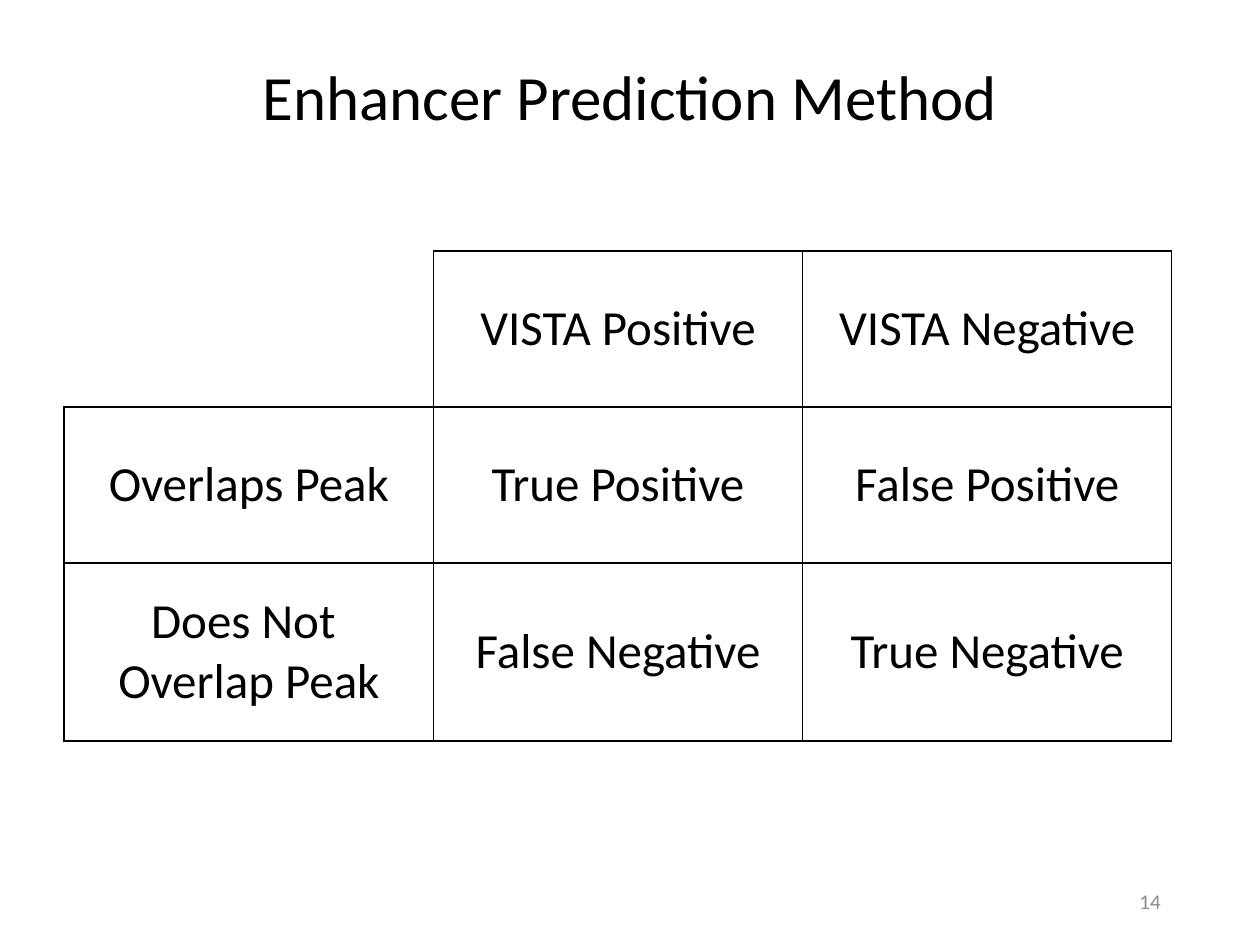
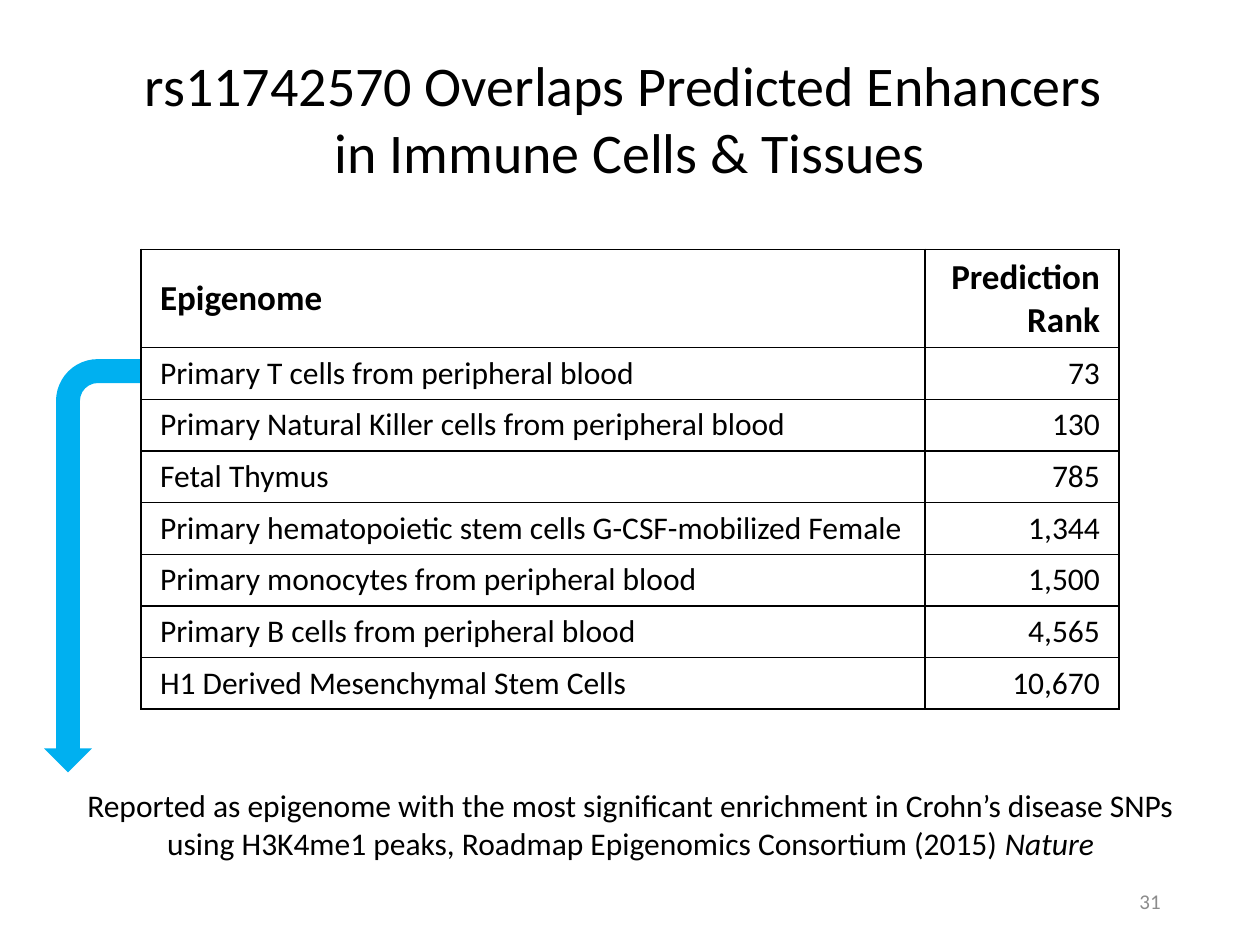
"""Build two slides on enhancer predictions, each with a ruled table."""
from dataclasses import dataclass

import lxml.etree
import pptx
import pptx.dml.color
import pptx.enum.shapes
import pptx.enum.text
import pptx.oxml.ns
import pptx.util

Inches = pptx.util.Inches
Pt = pptx.util.Pt
RGBColor = pptx.dml.color.RGBColor
Align = pptx.enum.text.PP_ALIGN
Anchor = pptx.enum.text.MSO_ANCHOR

BLACK = RGBColor(0x00, 0x00, 0x00)
GREY = RGBColor(0x8C, 0x8C, 0x8C)
BLUE = RGBColor(0x00, 0xB0, 0xF0)
FONT = "Calibri"

MATRIX = [
    ("", "VISTA Positive", "VISTA Negative"),
    ("Overlaps Peak", "True Positive", "False Positive"),
    ("Does Not \nOverlap Peak", "False Negative", "True Negative"),
]
RANKS = [
    ("Epigenome", "Prediction Rank"),
    ("Primary T cells from peripheral blood", "73"),
    ("Primary Natural Killer cells from peripheral blood", "130"),
    ("Fetal Thymus", "785"),
    ("Primary hematopoietic stem cells G-CSF-mobilized Female", "1,344"),
    ("Primary monocytes from peripheral blood", "1,500"),
    ("Primary B cells from peripheral blood", "4,565"),
    ("H1 Derived Mesenchymal Stem Cells", "10,670"),
]


@dataclass
class Box:
    """Place of an element, in inches."""
    left: float
    top: float
    width: float
    height: float

    def place(self) -> tuple:
        """Give the four lengths in slide units."""
        return tuple(Inches(n) for n in (self.left, self.top, self.width, self.height))


@dataclass
class Grid:
    """Place, sizes and text style of a ruled table."""
    left: float
    top: float
    cols: list
    rows: list
    cells: list
    aligns: list
    size: int
    head: int
    bold: bool = False
    pad: float = 0.1


PAGE = Box(7.06, 6.95, 2.25, 0.4)


def write(frame, text: str, *, size: int, color: RGBColor = BLACK, align=Align.CENTER,
          bold: bool = False, slant: str = "") -> None:
    """Fill a frame with one paragraph a line, then a slanted ending."""
    frame.word_wrap = True
    for index, line in enumerate(text.split("\n")):
        para = frame.paragraphs[0] if index == 0 else frame.add_paragraph()
        para.alignment = align
        for part, lean in ((line, False), (slant, True)):
            if part:
                run = para.add_run()
                run.text = part
                font = run.font
                font.name, font.size, font.bold, font.italic = FONT, Pt(size), bold, lean
                font.color.rgb = color


def label(slide, box: Box, text: str, anchor=Anchor.TOP, **style) -> None:
    """Add a text box."""
    frame = slide.shapes.add_textbox(*box.place()).text_frame
    frame.vertical_anchor = anchor
    write(frame, text, **style)


def rule(cell, sides: str) -> None:
    """Draw thin black lines on the given sides of a cell."""
    props = cell._tc.get_or_add_tcPr()
    for index, side in enumerate(sides):
        line = lxml.etree.Element(pptx.oxml.ns.qn(f"a:ln{side}"), w=str(Pt(1)))
        fill = lxml.etree.SubElement(line, pptx.oxml.ns.qn("a:solidFill"))
        lxml.etree.SubElement(fill, pptx.oxml.ns.qn("a:srgbClr"), val=str(BLACK))
        props.insert(index, line)


def draw(slide, grid: Grid) -> None:
    """Add a table; a blank cell keeps only its right and bottom lines."""
    box = Box(grid.left, grid.top, sum(grid.cols), sum(grid.rows))
    table = slide.shapes.add_table(len(grid.rows), len(grid.cols), *box.place()).table
    table.first_row = table.horz_banding = False
    for col, width in zip(table.columns, grid.cols):
        col.width = Inches(width)
    for row, height in zip(table.rows, grid.rows):
        row.height = Inches(height)
    for r, texts in enumerate(grid.cells):
        for c, text in enumerate(texts):
            cell = table.cell(r, c)
            cell.fill.background()
            cell.vertical_anchor = Anchor.MIDDLE
            cell.margin_left = cell.margin_right = Inches(grid.pad)
            rule(cell, "LRTB" if text else "RB")
            write(cell.text_frame, text, size=grid.size if r else grid.head,
                  align=grid.aligns[c], bold=grid.bold and r == 0)


def start(deck, page: int, title: str, box: Box, size: int, anchor=Anchor.TOP):
    """Add a blank slide with its title and page number."""
    slide = deck.slides.add_slide(deck.slide_layouts[6])
    label(slide, box, title, anchor, size=size)
    label(slide, PAGE, str(page), Anchor.MIDDLE, size=12, color=GREY, align=Align.RIGHT)
    return slide


def point(slide, box: Box) -> None:
    """Add the bent arrow that leads from a row down to the note."""
    arrow = slide.shapes.add_shape(pptx.enum.shapes.MSO_SHAPE.BENT_ARROW, *box.place())
    arrow.shadow.inherit = False
    arrow.fill.solid()
    arrow.fill.fore_color.rgb = BLUE
    arrow.line.fill.background()
    arrow.rotation = 270
    arrow.element.spPr.xfrm.set("flipH", "1")


def main() -> None:
    """Build and save the deck."""
    deck = pptx.Presentation()
    deck.slide_width, deck.slide_height = Inches(10), Inches(7.5)

    method = start(deck, 14, "Enhancer Prediction Method", Box(0, 0.41, 10, 0.71), 36)
    draw(method, Grid(0.51, 1.99, [2.93] * 3, [1.24, 1.24, 1.41], MATRIX,
                      [Align.CENTER] * 3, size=28, head=28))

    ranks = start(deck, 31,
                  "rs11742570 Overlaps Predicted Enhancers \nin Immune Cells & Tissues",
                  Box(0, 0.31, 10, 1.25), 32, Anchor.MIDDLE)
    draw(ranks, Grid(1.12, 1.98, [6.22, 1.54], [0.78] + [0.41] * 7, RANKS,
                     [Align.LEFT, Align.RIGHT], size=18, head=20, bold=True, pad=0.15))
    point(ranks, Box(-0.91, 4.11, 3.28, 0.76))
    label(ranks, Box(0.52, 6.19, 8.97, 0.71),
          "Reported as epigenome with the most significant enrichment in Crohn’s disease "
          "SNPs using H3K4me1 peaks, Roadmap Epigenomics Consortium (2015) ",
          size=18, slant="Nature")

    deck.save("out.pptx")


if __name__ == "__main__":
    main()
